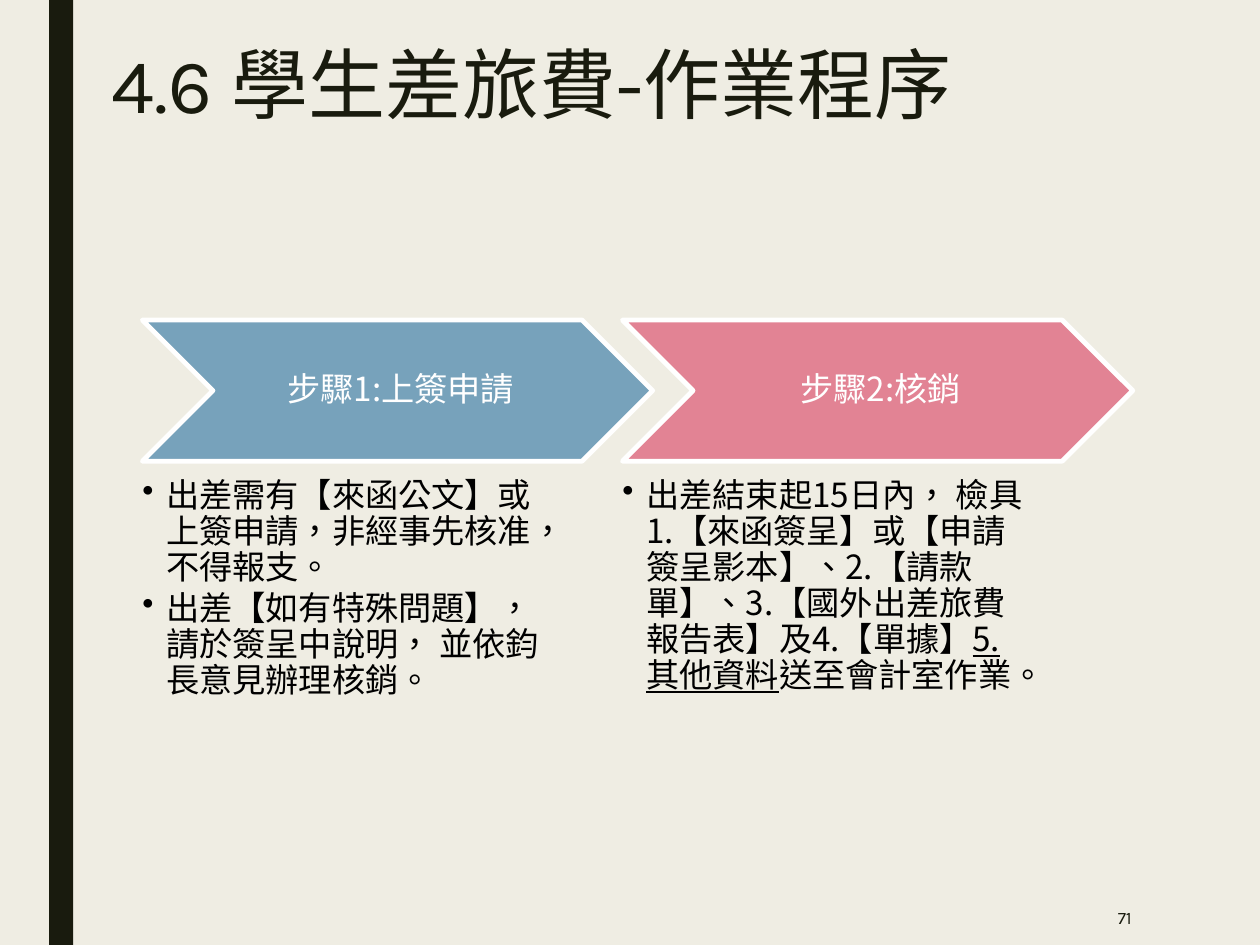
"""Build the slide on the two-step procedure for student travel expenses."""
from lxml.etree import SubElement
from pptx import Presentation
from pptx.dml.color import RGBColor
from pptx.enum.lang import MSO_LANGUAGE_ID
from pptx.enum.shapes import MSO_SHAPE
from pptx.enum.text import MSO_ANCHOR, PP_ALIGN
from pptx.oxml.ns import qn
from pptx.util import Inches, Pt

LATIN, CJK = "Karla", "Noto Sans CJK SC"
PAPER, INK, WHITE, BLACK = "EFEDE3", "191B0E", "FFFFFF", "000000"
TITLE = "4.6 學生差旅費-作業程序"
PAGE_NUMBER = "71"
STEPS = [
    ("步驟1:上簽申請", "77A2BB", [
        [("出差需有【來函公文】或上簽申請，非經事先核准，不得報支。", "")],
        [("出差", ""), ("【", "bold"), ("如有特殊問題", ""), ("】", "bold"),
         ("，請於簽呈中說明， 並依鈞長意見辦理核銷。", "")],
    ]),
    ("步驟2:核銷", "E28394", [
        [("出差結束起15日內， 檢具 1.【來函簽呈】或【申請簽呈影本】、"
          "2.【請款單】、3.【國外出差旅費報告表】及4.【單據】", ""),
         ("5.其他資料", "underline"), ("送至會計室作業。", "")],
    ]),
]
STEP_LEFT, STEP_PITCH = 1.13, 3.81
ARROW_TOP, ARROW_WIDTH, ARROW_HEIGHT = 2.54, 4.05, 1.12
DETAIL_TOP, DETAIL_WIDTH, DETAIL_HEIGHT = 3.8, 3.24, 2.57
BULLET_INDENT = 0.19
STEP_SIZE = 19


def paint(fill, color):
    fill.solid()
    fill.fore_color.rgb = RGBColor.from_string(color)


def add_block(slide, preset, box, color):
    block = slide.shapes.add_shape(preset, *map(Inches, box))
    block.shadow.inherit = False
    paint(block.fill, color)
    block.line.fill.background()
    return block


def set_frame(frame, insets, anchor=MSO_ANCHOR.TOP):
    frame.word_wrap = True
    frame.vertical_anchor = anchor
    (frame.margin_left, frame.margin_top,
     frame.margin_right, frame.margin_bottom) = map(Inches, insets)
    return frame


def add_text(slide, box, insets, anchor=MSO_ANCHOR.TOP):
    return set_frame(slide.shapes.add_textbox(*map(Inches, box)).text_frame, insets, anchor)


def add_run(paragraph, text, size, color, latin=CJK, emphasis=""):
    run = paragraph.add_run()
    run.text = text
    font = run.font
    font.size, font.name = Pt(size), latin
    font.language_id = MSO_LANGUAGE_ID.TRADITIONAL_CHINESE
    font.bold = emphasis == "bold"
    font.underline = emphasis == "underline"
    paint(font.fill, color)
    SubElement(run.font._element, qn("a:ea"), typeface=CJK)


def add_bullet(paragraph):
    properties = paragraph._p.get_or_add_pPr()
    properties.set("marL", str(Inches(BULLET_INDENT)))
    properties.set("indent", str(-Inches(BULLET_INDENT)))
    SubElement(properties, qn("a:buChar"), char="•")


def add_step(slide, left, heading, color, details):
    arrow = add_block(slide, MSO_SHAPE.CHEVRON,
                      (left, ARROW_TOP, ARROW_WIDTH, ARROW_HEIGHT), color)
    paint(arrow.line.fill, WHITE)
    arrow.line.width = Pt(2.75)
    label = set_frame(arrow.text_frame, (0.08, 0.03, 0.03, 0.03), MSO_ANCHOR.MIDDLE).paragraphs[0]
    label.alignment, label.line_spacing = PP_ALIGN.CENTER, 0.9
    add_run(label, heading, STEP_SIZE, WHITE)

    frame = add_text(slide, (left, DETAIL_TOP, DETAIL_WIDTH, DETAIL_HEIGHT), (0, 0, 0, 0))
    for index, runs in enumerate(details):
        paragraph = frame.add_paragraph() if index else frame.paragraphs[0]
        paragraph.line_spacing = 0.9
        paragraph.space_after = Pt(STEP_SIZE * 0.15)
        add_bullet(paragraph)
        for text, emphasis in runs:
            add_run(paragraph, text, STEP_SIZE, BLACK, emphasis=emphasis)


def main():
    deck = Presentation()
    deck.slide_width, deck.slide_height = Inches(10), Inches(7.5)
    slide = deck.slides.add_slide(deck.slide_layouts[6])
    paint(slide.background.fill, PAPER)
    add_block(slide, MSO_SHAPE.RECTANGLE, (0.39, 0, 0.19, 7.5), INK)

    title = add_text(slide, (0.79, 0.33, 8.62, 1.45), (0.1, 0.05, 0.1, 0.05)).paragraphs[0]
    title.line_spacing = 0.89
    add_run(title, TITLE, 44, INK, LATIN)

    for index, step in enumerate(STEPS):
        add_step(slide, STEP_LEFT + index * STEP_PITCH, *step)

    number = add_text(slide, (7.77, 7.06, 1.31, 0.44), (0.1, 0.05, 0.1, 0.05),
                      MSO_ANCHOR.MIDDLE).paragraphs[0]
    number.alignment = PP_ALIGN.RIGHT
    add_run(number, PAGE_NUMBER, 10, INK, LATIN)
    deck.save("out.pptx")


if __name__ == "__main__":
    main()
